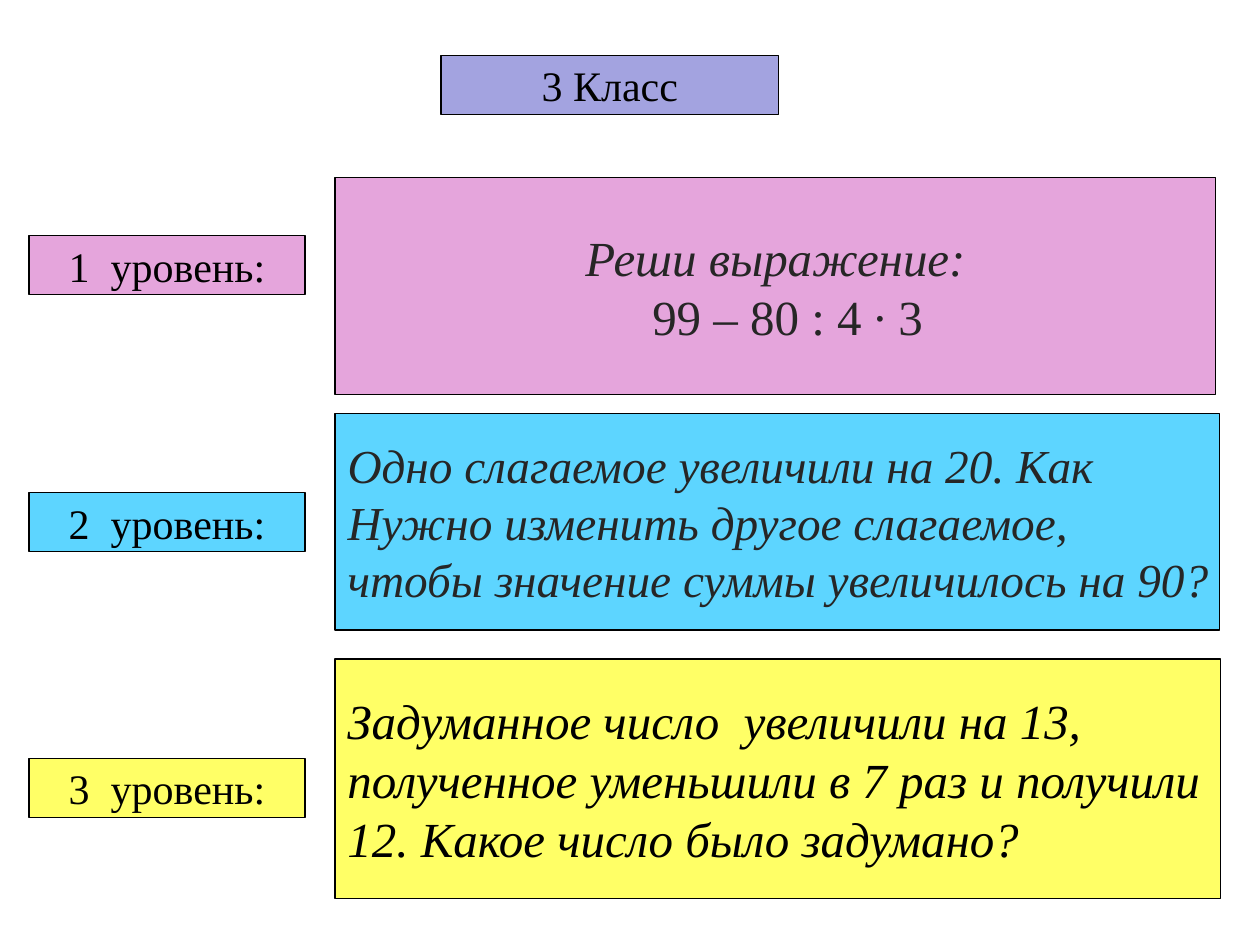
from pptx import Presentation
from pptx.dml.color import RGBColor
from pptx.enum.shapes import MSO_SHAPE
from pptx.enum.text import MSO_ANCHOR, MSO_AUTO_SIZE, PP_ALIGN
from pptx.util import Inches, Pt

THEME = {
    "font": "Times New Roman",
    "title": "A3A3E0", "ink": "000000", "soft": "262626",
    "label_size": 24, "line_width": 0.75,
}
TITLE = "3 Класс"
LEVELS = [
    {"label": "1  уровень:", "fill": "E5A5DC", "ink": "soft", "size": 28,
     "align": PP_ALIGN.CENTER, "label_top": 18.7, "top": 14.1, "width": 69.9, "height": 17.2,
     "lines": [("Реши выражение:", True, 0), ("99 – 80 : 4 ∙ 3", False, 1.9)]},
    {"label": "2  уровень:", "fill": "5DD5FF", "ink": "soft", "size": 27,
     "align": PP_ALIGN.LEFT, "label_top": 39.1, "top": 32.8, "width": 70.2, "height": 17.2,
     "lines": [("Одно слагаемое увеличили на 20. Как", True, 0),
               ("Нужно изменить другое слагаемое,", True, 0),
               ("чтобы значение суммы увеличилось на 90?", True, 0)]},
    {"label": "3  уровень:", "fill": "FFFF66", "ink": "ink", "size": 28,
     "align": PP_ALIGN.LEFT, "label_top": 60.2, "top": 52.3, "width": 70.3, "height": 19,
     "lines": [("Задуманное число  увеличили на 13,", True, 0),
               ("полученное уменьшили в 7 раз и получили", True, 0),
               ("12. Какое число было задумано?", True, 0)]},
]
COLS, ROWS = 100, 75
LABEL_LEFT, LABEL_WIDTH, LABEL_HEIGHT = 2.3, 21.9, 4.7
TASK_LEFT = 26.6
TITLE_BOX = (35, 4.4, 26.8, LABEL_HEIGHT)

prs = Presentation()
prs.slide_width, prs.slide_height = Inches(10), Inches(7.5)
CELL_W, CELL_H = prs.slide_width / COLS, prs.slide_height / ROWS
s = prs.slides.add_slide(prs.slide_layouts[5])


def grid(left, top, width, height):
    return [round(v * cell) for v, cell in
            zip((left, top, width, height), (CELL_W, CELL_H, CELL_W, CELL_H))]


def set_all(obj, values):
    for name, value in values.items():
        setattr(obj, name, value)


def style(sp, fill):
    sp.fill.solid()
    sp.fill.fore_color.rgb = RGBColor.from_string(fill)
    sp.line.color.rgb = RGBColor.from_string(THEME["ink"])
    sp.line.width = Pt(THEME["line_width"])
    set_all(sp.text_frame, {"auto_size": MSO_AUTO_SIZE.NONE, "word_wrap": False,
                            "vertical_anchor": MSO_ANCHOR.MIDDLE})


def write(sp, lines, size, ink="ink", align=PP_ALIGN.CENTER):
    tf = sp.text_frame
    for i, (text, italic, indent) in enumerate(lines):
        p = tf.add_paragraph() if i else tf.paragraphs[0]
        p.alignment = align
        if indent:
            p._p.get_or_add_pPr().set("marL", str(round(indent * CELL_W)))
        r = p.add_run()
        r.text = text
        set_all(r.font, {"name": THEME["font"], "size": Pt(size), "italic": italic})
        r.font.color.rgb = RGBColor.from_string(THEME[ink])


def add_box(box, fill):
    sp = s.shapes.add_shape(MSO_SHAPE.RECTANGLE, *grid(*box))
    sp.shadow.inherit = False
    style(sp, fill)
    return sp


title = s.shapes.title
set_all(title, dict(zip(("left", "top", "width", "height"), grid(*TITLE_BOX))))
style(title, THEME["title"])
write(title, [(TITLE, False, 0)], THEME["label_size"])

for level in LEVELS:
    task = add_box((TASK_LEFT, level["top"], level["width"], level["height"]), level["fill"])
    write(task, level["lines"], level["size"], level["ink"], level["align"])
    label = add_box((LABEL_LEFT, level["label_top"], LABEL_WIDTH, LABEL_HEIGHT), level["fill"])
    write(label, [(level["label"], False, 0)], THEME["label_size"])

prs.save("out.pptx")
